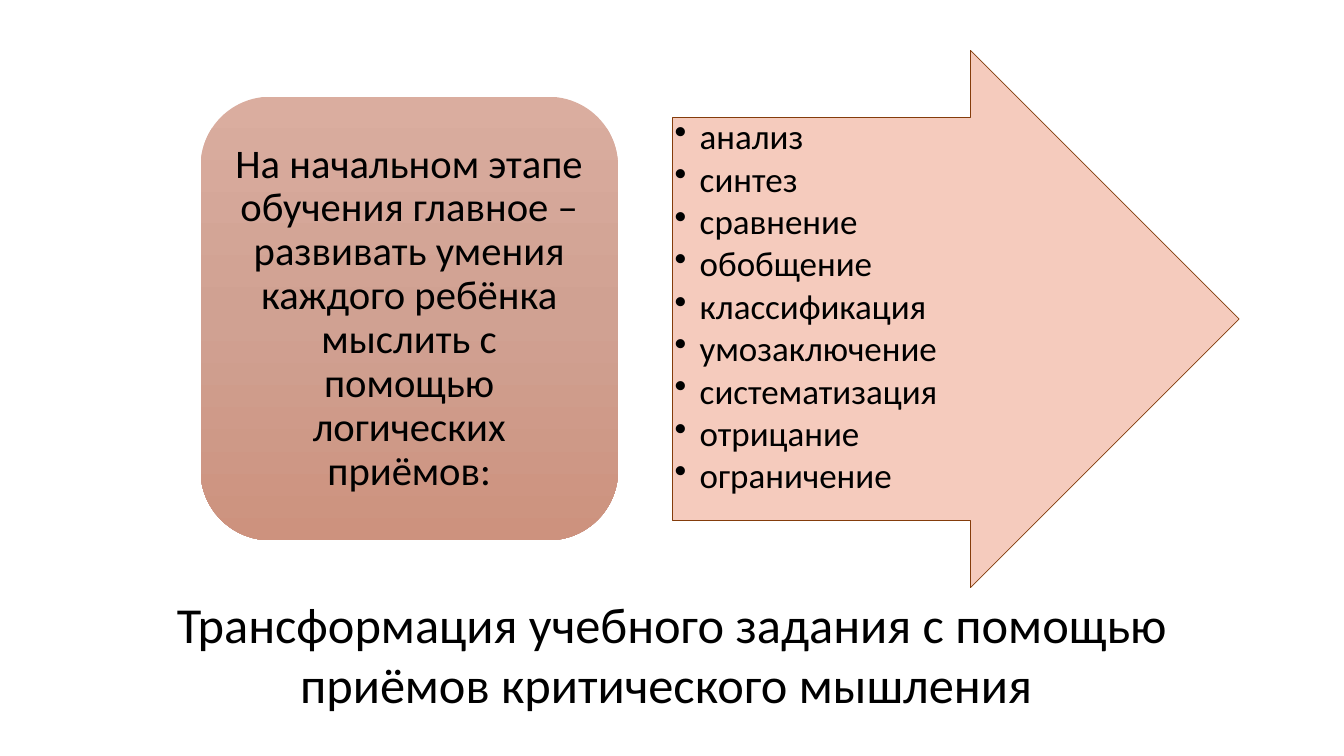
import copy
from dataclasses import dataclass

import pptx
import pptx.dml.color
import pptx.enum.shapes
import pptx.enum.text
import pptx.oxml
import pptx.oxml.ns
import pptx.util
from pptx.util import Inches

SHAPES = pptx.enum.shapes.MSO_SHAPE
ALIGN = pptx.enum.text.PP_ALIGN
ANCHOR = pptx.enum.text.MSO_ANCHOR
qn = pptx.oxml.ns.qn

GOAL = ("На начальном этапе обучения главное – развивать умения каждого "
        "ребёнка мыслить с помощью логических приёмов:")
TECHNIQUES = ["анализ", "синтез", "сравнение", "обобщение", "классификация",
              "умозаключение", "систематизация", "отрицание", "ограничение"]
CAPTION = "Трансформация учебного задания с помощью приёмов критического мышления "


@dataclass(frozen=True)
class Theme:
    font: str = "Calibri"
    ink: str = "000000"
    arrow_fill: str = "F5C6B6"
    arrow_line: str = "843C0B"
    goal_gradient: tuple = ("DAAD9F", "D0A192", "CD927E")
    list_size: int = 25
    goal_size: int = 29
    caption_size: int = 36


def rgb(code):
    return pptx.dml.color.RGBColor.from_string(code)


def add_xml(parent, tag, **attributes):
    child = pptx.oxml.parse_xml(f"<{tag} {pptx.oxml.ns.nsdecls('a')}/>")
    for name, value in attributes.items():
        child.set(name, str(value))
    parent.append(child)


class SlideBuilder:
    def __init__(self, page, theme):
        self.page = page
        self.theme = theme

    def shape(self, kind, left, top, width, height):
        box = self.page.shapes.add_shape(
            kind, Inches(left), Inches(top), Inches(width), Inches(height))
        box.shadow.inherit = False
        return box

    def arrow(self, left, top, width, height):
        box = self.shape(SHAPES.RIGHT_ARROW, left, top, width, height)
        box.adjustments[0] = 0.75
        box.adjustments[1] = 0.5
        box.fill.solid()
        box.fill.fore_color.rgb = rgb(self.theme.arrow_fill)
        color = next(box.element.iter(qn("a:srgbClr")))
        add_xml(color, "a:alpha", val=90000)
        box.line.color.rgb = rgb(self.theme.arrow_line)
        box.line.width = pptx.util.Pt(0.5)
        return box

    def gradient_card(self, left, top, width, height):
        box = self.shape(SHAPES.ROUNDED_RECTANGLE, left, top, width, height)
        box.fill.gradient()
        box.fill.gradient_angle = 270
        first = next(box.element.iter(qn("a:gs")))
        first.addnext(copy.deepcopy(first))
        colors = self.theme.goal_gradient
        for index, stop in enumerate(box.fill.gradient_stops):
            stop.position = index / (len(colors) - 1)
            stop.color.rgb = rgb(colors[index])
        box.line.fill.background()
        return box

    def caption(self, text, left, top, width, height):
        box = self.page.shapes.add_textbox(
            Inches(left), Inches(top), Inches(width), Inches(height))
        self.set_text(box, [text], size=self.theme.caption_size)
        box.text_frame.auto_size = pptx.enum.text.MSO_AUTO_SIZE.SHAPE_TO_FIT_TEXT

    def set_text(self, box, lines, size, align=ALIGN.CENTER, anchor=ANCHOR.TOP,
                 margins=(0.1, 0.05), line_spacing=1.0, space_after=0, bullet=False):
        frame = box.text_frame
        frame.word_wrap = True
        frame.vertical_anchor = anchor
        frame.margin_left = frame.margin_right = Inches(margins[0])
        frame.margin_top = frame.margin_bottom = Inches(margins[1])
        for index, line in enumerate(lines):
            para = frame.paragraphs[0] if index == 0 else frame.add_paragraph()
            para.alignment = align
            para.line_spacing = line_spacing
            para.space_after = pptx.util.Pt(space_after)
            if bullet:
                properties = para._p.get_or_add_pPr()
                properties.set("marL", str(Inches(0.25)))
                properties.set("indent", str(Inches(-0.25)))
                add_xml(properties, "a:buChar", char="•")
            span = para.add_run()
            span.text = line
            span.font.name = self.theme.font
            span.font.size = pptx.util.Pt(size)
            span.font.color.rgb = rgb(self.theme.ink)


def main():
    deck = pptx.Presentation()
    deck.slide_width = Inches(13.33)
    deck.slide_height = Inches(7.5)
    theme = Theme()
    builder = SlideBuilder(deck.slides.add_slide(deck.slide_layouts[6]), theme)

    arrow = builder.arrow(6.67, 0.5, 5.62, 5.33)
    builder.set_text(arrow, TECHNIQUES, size=theme.list_size, align=ALIGN.LEFT,
                     margins=(0.02, 0.02), line_spacing=0.9, space_after=3.3,
                     bullet=True)
    card = builder.gradient_card(1.99, 0.96, 4.14, 4.4)
    builder.set_text(card, [GOAL], size=theme.goal_size, anchor=ANCHOR.MIDDLE,
                     margins=(0.12, 0.06), line_spacing=0.9)
    builder.caption(CAPTION, 1.54, 5.83, 10.25, 1.31)
    deck.save("out.pptx")


if __name__ == "__main__":
    main()
